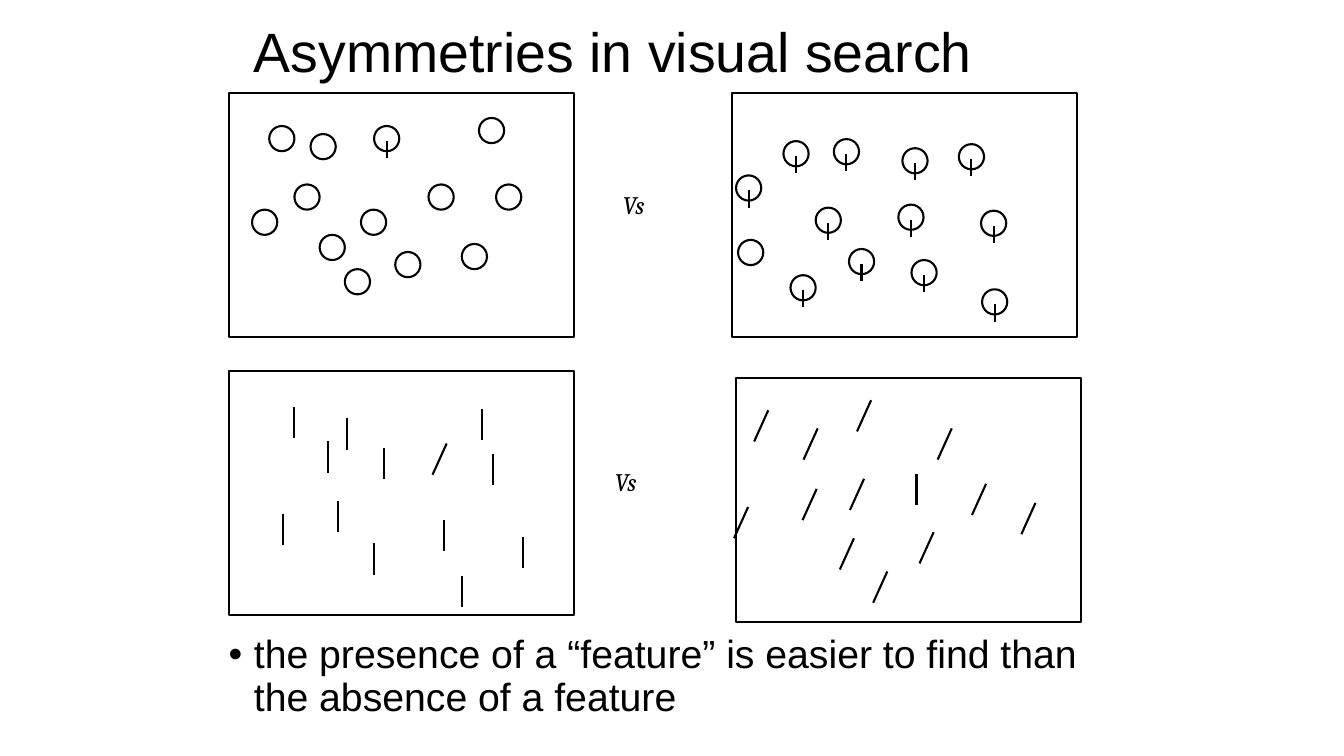
from lxml import etree
from pptx import Presentation
from pptx.dml.color import RGBColor
from pptx.enum.shapes import MSO_CONNECTOR, MSO_SHAPE
from pptx.enum.text import MSO_ANCHOR, MSO_AUTO_SIZE
from pptx.oxml.ns import qn
from pptx.util import Inches, Pt

RECT, OVAL = MSO_SHAPE.RECTANGLE, MSO_SHAPE.OVAL
STRAIGHT = MSO_CONNECTOR.STRAIGHT
MIDDLE, TOP = MSO_ANCHOR.MIDDLE, MSO_ANCHOR.TOP
FIT_SHAPE = MSO_AUTO_SIZE.SHAPE_TO_FIT_TEXT
BLACK, WHITE = "000000", "FFFFFF"
PANEL_W, PANEL_H = 3.42, 2.42
CIRCLE = 0.25
BAR_H, TILT = 0.31, 0.14

PLAIN_CIRCLES = [(0.4, 0.33), (0.81, 0.41), (1.31, 1.16), (0.23, 1.16),
                 (1.98, 0.91), (0.9, 1.41), (2.31, 1.5), (2.48, 0.25),
                 (1.15, 1.75), (2.65, 0.91), (0.65, 0.91), (1.65, 1.58)]
TAILED_CIRCLES = [(0.51, 0.48), (1.01, 0.46), (0.04, 0.82), (1.69, 0.55),
                  (1.16, 1.55), (1.65, 1.11), (2.25, 0.51), (0.83, 1.14),
                  (2.47, 1.17), (1.78, 1.66), (2.48, 1.95), (0.58, 1.81)]
UPRIGHT_BARS = [(0.65, 0.36), (1.17, 0.47), (0.98, 0.7), (0.54, 1.42),
                (2.51, 0.38), (1.08, 1.29), (1.54, 0.76), (1.44, 1.71),
                (2.92, 1.65), (2.13, 1.48), (2.31, 2.03), (2.62, 0.82)]
TILTED_BARS = [(0.32, 0.32), (0.81, 0.5), (0.8, 1.1), (2.14, 0.5),
               (2.97, 1.24), (1.96, 1.53), (2.48, 1.05), (1.17, 1.59),
               (1.34, 0.22), (1.27, 1.0), (1.5, 1.92), (0.12, 1.28)]


def color(hex_string):
    """Turn a hex string into a colour."""
    return RGBColor.from_string(hex_string)


def add_outline(s, kind, x, y, w, h):
    """Add a white shape with a black outline."""
    sp = s.shapes.add_shape(kind, Inches(x), Inches(y), Inches(w), Inches(h))
    sp.shadow.inherit = False
    sp.fill.solid()
    sp.fill.fore_color.rgb = color(WHITE)
    sp.line.color.rgb = color(BLACK)
    sp.line.width = Pt(1.5)


def add_line(s, x1, y1, x2, y2):
    """Add a black straight line."""
    line = s.shapes.add_connector(STRAIGHT, Inches(x1), Inches(y1), Inches(x2), Inches(y2))
    line.line.color.rgb = color(BLACK)
    line.line.width = Pt(1.5)
    etree.SubElement(line._element.spPr, qn("a:effectLst"))


def add_text(s, box, text, size, font="Arial", italic=False, anchor=TOP, wrap=True):
    """Add a text box and return its text frame."""
    tf = s.shapes.add_textbox(*(Inches(v) for v in box)).text_frame
    tf.word_wrap = wrap
    tf.vertical_anchor = anchor
    tf.text = text
    r = tf.paragraphs[0].runs[0]
    r.font.size = Pt(size)
    r.font.name = font
    r.font.italic = italic
    r.font.color.rgb = color(BLACK)
    return tf


def add_circle(s, x, y, tailed):
    """Add a circle, with a tail crossing its lower edge if tailed."""
    add_outline(s, OVAL, x, y, CIRCLE, CIRCLE)
    if tailed:
        middle = x + CIRCLE / 2
        add_line(s, middle, y + 0.15, middle, y + 0.32)


def add_bar(s, x, y, tilted):
    """Add a bar going down from its top end, leaning if tilted."""
    add_line(s, x, y, x - TILT if tilted else x, y + BAR_H)


def add_panel(s, left, top, add_item, distractors, target, target_marked):
    """Add a framed search display with one odd item among the distractors."""
    add_outline(s, RECT, left, top, PANEL_W, PANEL_H)
    for x, y in distractors:
        add_item(s, left + x, top + y, not target_marked)
    add_item(s, left + target[0], top + target[1], target_marked)


def add_versus(s, left, top):
    """Add the label between two panels."""
    tf = add_text(s, (left, top, 0.45, 0.4), "Vs", 18, "Cambria", italic=True, wrap=False)
    tf.auto_size = FIT_SHAPE


def add_title(s, box):
    """Add the slide title."""
    tf = add_text(s, box, "Asymmetries in visual search", 39.6, anchor=MIDDLE)
    tf.paragraphs[0].line_spacing = 0.9


def add_conclusion(s, box):
    """Add the bulleted conclusion."""
    text = "the presence of a “feature” is easier to find than the absence of a feature"
    p = add_text(s, box, text, 28).paragraphs[0]
    p.line_spacing = 0.9
    p.space_before = Pt(10)
    pPr = p._p.get_or_add_pPr()
    pPr.set("marL", str(Inches(0.25)))
    pPr.set("indent", str(Inches(-0.25)))
    etree.SubElement(pPr, qn("a:buFont"), typeface="Arial")
    etree.SubElement(pPr, qn("a:buChar"), char="•")


def main():
    """Build the slide and save it."""
    prs = Presentation()
    prs.slide_width, prs.slide_height = Inches(13.33), Inches(7.5)
    s = prs.slides.add_slide(prs.slide_layouts[6])
    add_title(s, (2.42, 0.17, 8.5, 0.75))
    add_panel(s, 2.27, 0.92, add_circle, PLAIN_CIRCLES, (1.44, 0.33), True)
    add_versus(s, 6.08, 1.83)
    add_panel(s, 7.26, 0.92, add_circle, TAILED_CIRCLES, (0.06, 1.46), False)
    add_panel(s, 2.27, 3.68, add_bar, UPRIGHT_BARS, (2.16, 0.72), True)
    add_versus(s, 6, 4.58)
    add_panel(s, 7.3, 3.75, add_bar, TILTED_BARS, (1.79, 0.95), False)
    add_conclusion(s, (2.17, 6.25, 9.08, 1.03))
    prs.save("out.pptx")


if __name__ == "__main__":
    main()
